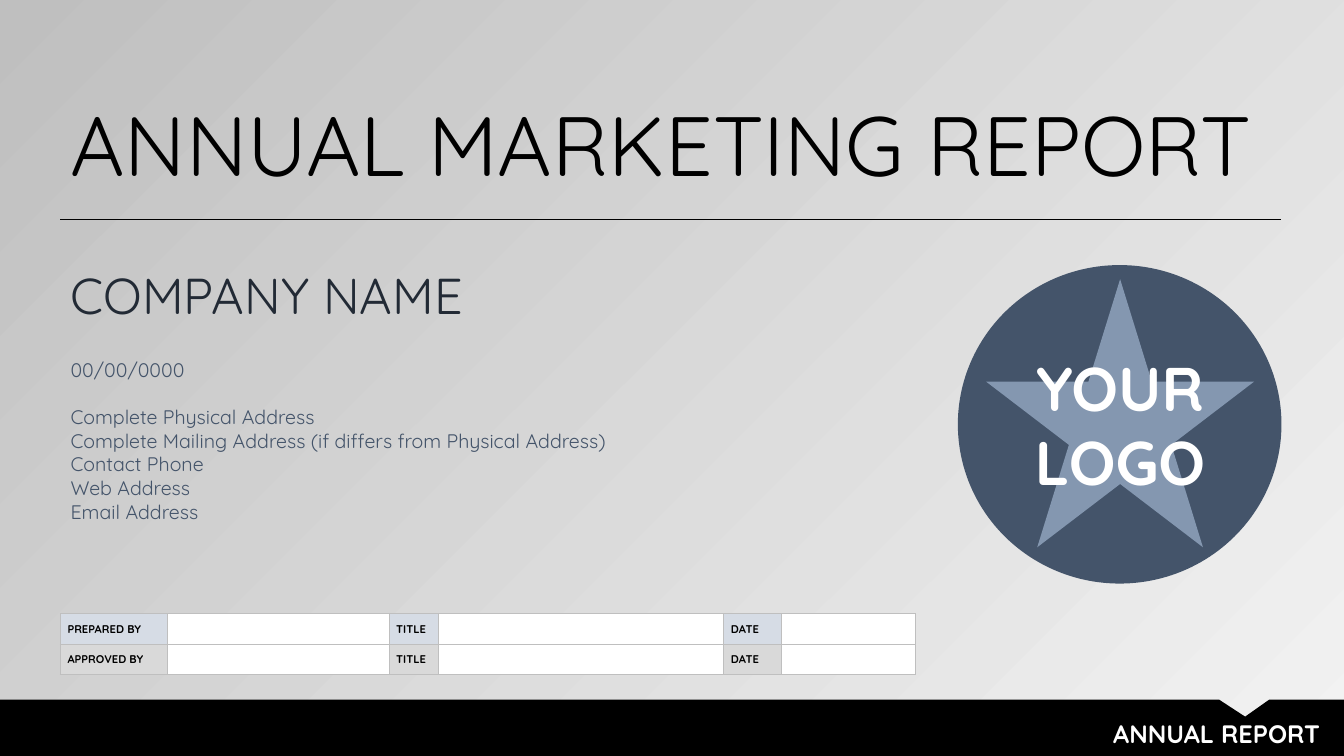
from lxml.etree import SubElement
from pptx import Presentation
from pptx.dml.color import RGBColor
from pptx.enum.shapes import MSO_CONNECTOR, MSO_SHAPE
from pptx.enum.text import MSO_ANCHOR, MSO_AUTO_SIZE, PP_ALIGN
from pptx.oxml.ns import qn
from pptx.util import Inches, Pt

COLORS = {
    "ink": "000000",
    "paper": "FFFFFF",
    "light": "F2F2F2",
    "border": "BFBFBF",
    "company": "222A35",
    "slate": "44546A",
    "star": "8497B0",
    "prepared": "D6DCE5",
    "approved": "D9D9D9",
}


class CoverSlide:
    font = "Quicksand"

    def __init__(self, presentation):
        self.slide = presentation.slides.add_slide(presentation.slide_layouts[0])

    def color(self, name):
        return RGBColor.from_string(COLORS[name])

    def place(self, shape, box):
        shape.left, shape.top, shape.width, shape.height = map(Inches, box)

    def paint(self, shape, fill):
        shape.shadow.inherit = False
        shape.fill.solid()
        shape.fill.fore_color.rgb = self.color(fill)
        shape.line.fill.background()

    def background(self, start, end):
        fill = self.slide.background.fill
        fill.gradient()
        fill.gradient_angle = 135
        for stop, position, name in zip(fill.gradient_stops, (0, 1), (start, end)):
            stop.position = position
            stop.color.rgb = self.color(name)

    def add_words(self, paragraph, text, size, color, bold=False):
        run = paragraph.add_run()
        run.text = text
        run.font.name = self.font
        run.font.size = Pt(size)
        run.font.bold = bold
        run.font.color.rgb = self.color(color)

    def fill_text(self, shape, lines, align=PP_ALIGN.LEFT, bold=False):
        frame = shape.text_frame
        frame.word_wrap = True
        frame.auto_size = MSO_AUTO_SIZE.SHAPE_TO_FIT_TEXT
        frame.vertical_anchor = MSO_ANCHOR.TOP
        for index, (text, size, color, gap) in enumerate(lines):
            paragraph = frame.add_paragraph() if index else frame.paragraphs[0]
            paragraph.alignment = align
            paragraph.space_before = Pt(gap)
            self.add_words(paragraph, text, size, color, bold)

    def placeholder(self, index, box, lines):
        shape = self.slide.placeholders[index]
        self.place(shape, box)
        self.fill_text(shape, lines)

    def text(self, box, lines, align, parent=None):
        shapes = (parent or self.slide).shapes
        self.fill_text(shapes.add_textbox(*map(Inches, box)), lines, align, True)

    def shape(self, kind, box, fill, parent):
        self.paint(parent.shapes.add_shape(kind, *map(Inches, box)), fill)

    def outline(self, points, fill):
        start, *rest = [(Inches(x), Inches(y)) for x, y in points]
        builder = self.slide.shapes.build_freeform(*start)
        builder.add_line_segments(rest, close=True)
        self.paint(builder.convert_to_shape(), fill)

    def rule(self, left, right, y, color, width):
        line = self.slide.shapes.add_connector(
            MSO_CONNECTOR.STRAIGHT, Inches(left), Inches(y), Inches(right), Inches(y)
        )
        line.line.color.rgb = self.color(color)
        line.line.width = Pt(width)
        SubElement(line._element.spPr, qn("a:effectLst"))

    def cell(self, cell, text, fill):
        cell.fill.solid()
        cell.fill.fore_color.rgb = self.color(fill)
        cell.margin_left = cell.margin_right = Inches(0.07)
        cell.margin_top = cell.margin_bottom = 0
        cell.vertical_anchor = MSO_ANCHOR.MIDDLE
        paragraph = cell.text_frame.paragraphs[0]
        if text:
            paragraph.line_spacing = 1.07
            self.add_words(paragraph, text, 8, "ink", True)
        else:
            SubElement(paragraph._p, qn("a:endParaRPr"), sz="800")
        properties = cell._tc.get_or_add_tcPr()
        for position, side in enumerate(("lnL", "lnR", "lnT", "lnB")):
            border = properties.makeelement(qn(f"a:{side}"), w=str(Pt(1)))
            solid = SubElement(border, qn("a:solidFill"))
            SubElement(solid, qn("a:srgbClr"), val=COLORS["border"])
            properties.insert(position, border)

    def table(self, box, widths, rows):
        frame = self.slide.shapes.add_table(len(rows), len(widths), *map(Inches, box))
        table = frame.table
        table.first_row = table.horz_banding = False
        for column, width in zip(table.columns, widths):
            column.width = Inches(width)
        for row, (labels, fill) in zip(table.rows, rows):
            row.height = Inches(box[3] / len(rows))
            for index, cell in enumerate(row.cells):
                if index % 2:
                    self.cell(cell, "", "paper")
                else:
                    self.cell(cell, labels[index // 2], fill)


def main():
    presentation = Presentation()
    presentation.slide_width = Inches(13.33)
    presentation.slide_height = Inches(7.5)
    cover = CoverSlide(presentation)
    cover.background("light", "border")

    cover.outline(
        [(0, 6.94), (12.09, 6.94), (12.35, 7.11), (12.59, 6.94),
         (13.33, 6.94), (13.33, 7.5), (0, 7.5)],
        "ink",
    )
    cover.text((6.41, 7.08, 6.78, 0.4), [("ANNUAL REPORT", 18, "paper", 0)], PP_ALIGN.RIGHT)

    cover.placeholder(
        0, (0.6, 0.87, 12.27, 1.11), [("ANNUAL MARKETING REPORT", 60, "ink", 0)]
    )
    contacts = [
        "Complete Mailing Address (if differs from Physical Address)",
        "Contact Phone",
        "Web Address",
        "Email Address",
    ]
    cover.placeholder(
        1,
        (0.6, 2.57, 8.9, 2.69),
        [
            ("COMPANY NAME", 36, "company", 0),
            ("00/00/0000", 14, "slate", 24),
            ("Complete Physical Address", 14, "slate", 16.8),
        ]
        + [(contact, 14, "slate", 0) for contact in contacts],
    )
    cover.rule(0.6, 12.71, 2.18, "ink", 0.5)

    badge = cover.slide.shapes.add_group_shape()
    cover.shape(MSO_SHAPE.OVAL, (9.5, 2.63, 3.21, 3.16), "slate", badge)
    cover.shape(MSO_SHAPE.STAR_5_POINT, (9.78, 2.77, 2.66, 2.66), "star", badge)
    cover.text(
        (9.78, 3.42, 2.66, 1.58),
        [(word, 44, "paper", 0) for word in ("YOUR", "LOGO")],
        PP_ALIGN.CENTER,
        badge,
    )

    cover.table(
        (0.6, 6.09, 8.48, 0.6),
        (1.06, 2.2, 0.49, 2.83, 0.57, 1.33),
        [
            (("PREPARED BY", "TITLE", "DATE"), "prepared"),
            (("APPROVED BY", "TITLE", "DATE"), "approved"),
        ],
    )
    presentation.save("out.pptx")


if __name__ == "__main__":
    main()
